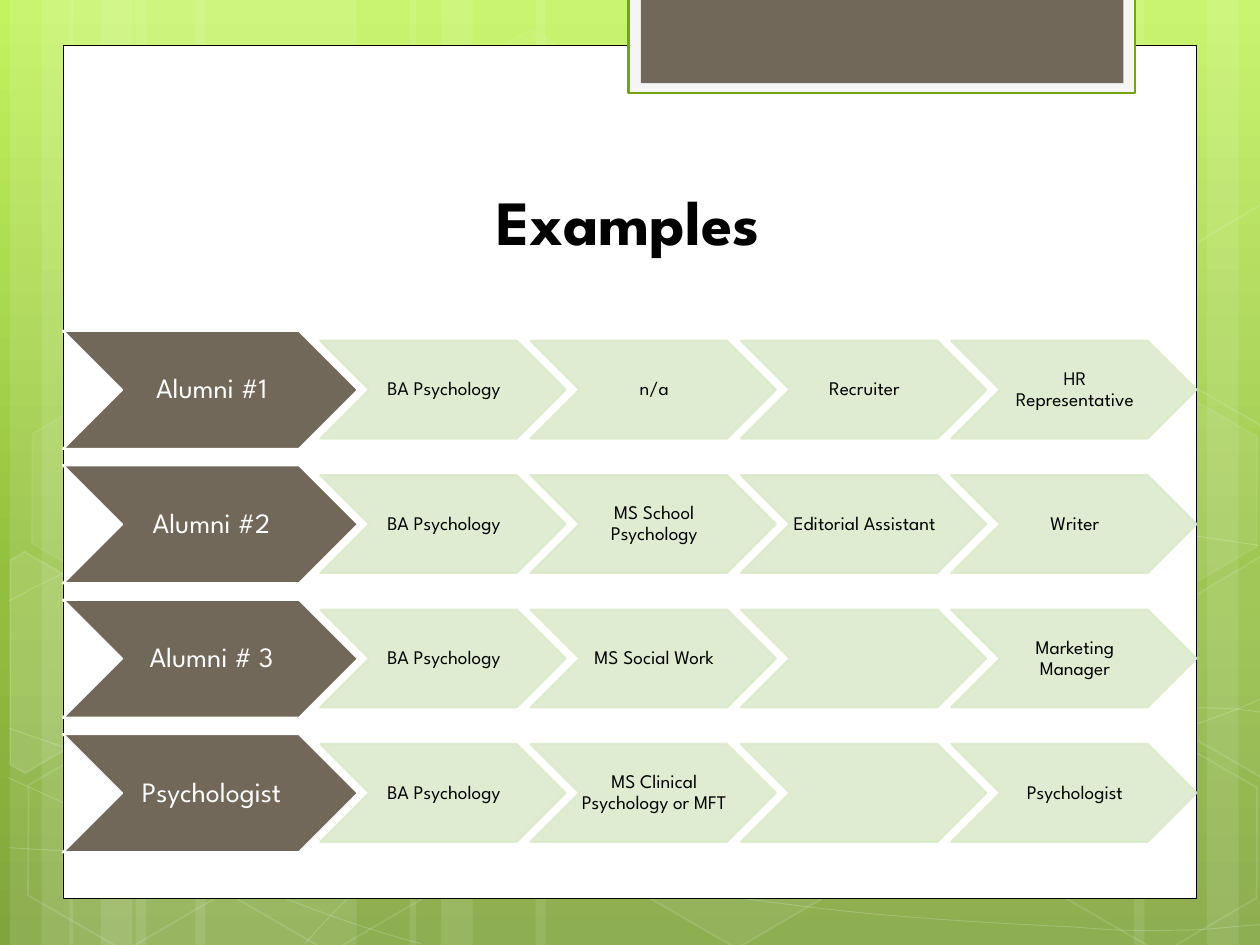
"""Build the Examples slide: four career paths as rows of chevrons."""
import copy
from dataclasses import dataclass

import pptx
import pptx.dml.color
import pptx.enum.shapes
import pptx.enum.text
import pptx.oxml
import pptx.oxml.ns
import pptx.util

Cm = pptx.util.Cm
Pt = pptx.util.Pt
qn = pptx.oxml.ns.qn
MSO = pptx.enum.shapes.MSO_SHAPE
FONT = "League Spartan"
WHITE, BLACK, BROWN, PALE = "FFFFFF", "000000", "71685A", "DCEACC"


@dataclass
class Style:
    fill: str | None = None
    fill_alpha: int = 100
    line: str | None = None
    line_alpha: int = 100
    width: float = 1


@dataclass
class Hexagon:
    left: float
    top: float
    fill_alpha: int
    line_alpha: int


@dataclass
class CutHexagon:
    x: float
    y: float
    fill_alpha: int
    corners: list[tuple[float, float]]


@dataclass
class Career:
    name: str
    steps: list[str]


BARS = [(2.74, 4.45), (0.2, 1.27), (0.84, 2.11), (3.94, 4.45), (1.4, 1.27), (2.03, 2.11),
        (18.62, 4.45), (24.33, 1.27), (22.86, 2.11), (10.8, 7.82), (8.26, 1.27), (8.89, 2.11)]

CURVES = [
    [(0.18, 17.09), (1.55, 17.17), (2.92, 17.25), (4.83, 17.22), (6.73, 17.2), (9.09, 17.15),
     (11.63, 16.89), (14.17, 16.64), (17.78, 16.15), (20.12, 15.67), (22.43, 15.19),
     (24.82, 14.43), (25.58, 14)],
    [(0.18, 12.12), (0.91, 11.71), (1.65, 11.33), (3.07, 10.95), (4.52, 10.57), (6.58, 10.01),
     (8.81, 9.83), (11.07, 9.65), (13.82, 9.63), (16.61, 9.83), (19.41, 10.03),
     (24.05, 10.82), (25.58, 11.02)],
    [(0.15, 15.67), (3.23, 17.07), (6.27, 18.47), (8.48, 19.02)],
    [(0.18, 14.68), (0.97, 14.96), (1.78, 15.24), (3.25, 15.65), (4.72, 16.03), (6.93, 16.66),
     (9.07, 17.09), (11.18, 17.53), (13.84, 17.98), (15.95, 18.24), (18.06, 18.52),
     (20.32, 18.62), (21.67, 18.69), (22.99, 18.8), (23.34, 18.75), (24, 18.75),
     (24.66, 18.72), (25.12, 18.64), (25.58, 18.64)],
    [(6.15, 19.02), (6.6, 18.52), (7.06, 18.01), (7.67, 17.55), (8.28, 17.09), (9.14, 16.59),
     (9.86, 16.23), (10.57, 15.88), (11, 15.72), (11.94, 15.47), (12.88, 15.21),
     (14.55, 14.86), (15.44, 14.68), (16.36, 14.5), (16.48, 14.5), (17.27, 14.45),
     (18.06, 14.38), (19.3, 14.3), (20.17, 14.27), (21.06, 14.25), (22.5, 14.27),
     (22.5, 14.27), (22.5, 14.27), (24.21, 14.27), (24.21, 14.27), (24.66, 14.27),
     (25.1, 14.3), (25.55, 14.38)],
]

HEXAGONS = [
    Hexagon(8.48, 0.91, 4, 8), Hexagon(12.62, 14.96, 6, 12), Hexagon(0.28, 15.01, 0, 12),
    Hexagon(0.36, 7.92, 7, 8), Hexagon(4.42, 15.04, 0, 12), Hexagon(19.13, 11.51, 10, 12),
    Hexagon(21.18, 15.06, 0, 12), Hexagon(21.18, 7.98, 7, 8),
]

LEFT_CUT = [(-1.75, -1.63), (-1.6, -1.93), (0.65, -1.93), (1.75, 0), (0.65, 1.93), (0.3, 1.93)]
RIGHT_CUT = [(-1.73, 0), (-0.65, -1.93), (-0.42, -1.93), (1.73, 1.73), (1.6, 1.93), (-0.63, 1.93)]
CUT_HEXAGONS = [CutHexagon(0.91, 13.59, 10, LEFT_CUT), CutHexagon(25.02, 13.21, 4, RIGHT_CUT),
                CutHexagon(25.02, 6.12, 0, RIGHT_CUT)]

CAREERS = [
    Career("Alumni #1", ["BA Psychology", "n/a", "Recruiter", "HR Representative"]),
    Career("Alumni #2", ["BA Psychology", "MS School Psychology", "Editorial Assistant", "Writer"]),
    Career("Alumni # 3", ["BA Psychology", "MS Social Work", "", "Marketing Manager"]),
    Career("Psychologist", ["BA Psychology", "MS Clinical Psychology or MFT", "", "Psychologist"]),
]


def rgb(value: str):
    """Turn a hex string into a colour."""
    return pptx.dml.color.RGBColor.from_string(value)


def paint(fill, color: str | None, alpha: int) -> None:
    """Fill with a colour at a percentage of opacity, or with nothing."""
    if color is None or alpha == 0:
        fill.background()
        return
    fill.solid()
    fill.fore_color.rgb = rgb(color)
    if alpha < 100:
        fill._xPr.find(".//" + qn("a:srgbClr")).append(pptx.oxml.parse_xml(
            f'<a:alpha {pptx.oxml.ns.nsdecls("a")} val="{alpha * 1000}"/>'))


def apply_style(sp, style: Style):
    """Set the fill and line of a shape and drop its shadow."""
    sp.shadow.inherit = False
    paint(sp.fill, style.fill, style.fill_alpha)
    if style.line:
        sp.line.width = Pt(style.width)
    paint(sp.line.fill, style.line, style.line_alpha)
    return sp


def add_shape(s, kind, box: tuple[float, ...], style: Style):
    """Add a styled preset shape with its box in centimetres."""
    return apply_style(s.shapes.add_shape(kind, *map(Cm, box)), style)


def add_outline(s, points: list[tuple[float, float]], style: Style, close: bool):
    """Add a styled outline through points in centimetres."""
    start, *rest = [(Cm(x), Cm(y)) for x, y in points]
    fb = s.shapes.build_freeform(*start, scale=1.0)
    fb.add_line_segments(rest, close=close)
    return apply_style(fb.convert_to_shape(), style)


def add_curve(s, points: list[tuple[float, float]]) -> None:
    """Add a faint open curve of cubic pieces that share their end points."""
    sp = add_outline(s, points, Style(line=WHITE, line_alpha=20, width=0.5), False)
    lines = list(sp._element.iter(qn("a:lnTo")))
    for first, second, third in zip(lines[::3], lines[1::3], lines[2::3]):
        cubic = pptx.oxml.parse_xml(f'<a:cubicBezTo {pptx.oxml.ns.nsdecls("a")}/>')
        first.addprevious(cubic)
        for line in (first, second, third):
            cubic.append(line[0])
            line.getparent().remove(line)


def set_text(sp, text: str, size: float, color: str, bold: bool = False) -> None:
    """Write one centred paragraph."""
    tf = sp.text_frame
    tf.word_wrap = True
    tf.vertical_anchor = pptx.enum.text.MSO_ANCHOR.MIDDLE
    p = tf.paragraphs[0]
    p.text = text
    p.alignment = pptx.enum.text.PP_ALIGN.CENTER
    p.font.name, p.font.size, p.font.bold = FONT, Pt(size), bold
    p.font.color.rgb = rgb(color)


def add_chevron(s, box: tuple[float, ...], style: Style, text: str, size: float, color: str) -> None:
    """Add a chevron with its label."""
    sp = add_shape(s, MSO.CHEVRON, box, style)
    if text:
        set_text(sp, text, size, color)
        tf = sp.text_frame
        tf.margin_left, tf.margin_right = Cm(0.04), 0
        tf.margin_top = tf.margin_bottom = Cm(0.02)
        tf.paragraphs[0].line_spacing = 0.9


def add_career(s, career: Career, top: float) -> None:
    """Draw one row: a dark name chevron and its pale steps."""
    add_chevron(s, (1.27, top, 5.95, 2.38), Style(BROWN, line=WHITE, width=1.25),
                career.name, 16, WHITE)
    for i, step in enumerate(career.steps):
        add_chevron(s, (6.46 + 4.24 * i, top + 0.2, 4.94, 1.97),
                    Style(PALE, 90, PALE, 90, 1.25), step, 11, BLACK)


def add_backdrop(s) -> None:
    """Draw the green gradient with its bars, curves, hexagons and panel."""
    fill = s.background.fill
    fill.gradient()
    fill.gradient_angle = 270
    stops = s._element.find(".//" + qn("a:gsLst"))
    stops.insert(1, copy.deepcopy(stops[0]))
    for stop, (position, color) in zip(
            fill.gradient_stops, [(0, "C3F35F"), (0.62, "93BF3F"), (1, "81A53E")]):
        stop.position, stop.color.rgb = position, rgb(color)
    for left, width in BARS:
        add_shape(s, MSO.RECTANGLE, (left, 0, width, 19.05), Style(WHITE, 10))
    for points in CURVES:
        add_curve(s, points)
    for h in HEXAGONS:
        sp = add_shape(s, MSO.HEXAGON, (h.left, h.top, 4.45, 3.86),
                       Style(WHITE, h.fill_alpha, WHITE, h.line_alpha))
        sp.adjustments[0] = 0.285
        sp.rotation = 30
    for c in CUT_HEXAGONS:
        points = [(c.x + x, c.y + y) for x, y in c.corners]
        add_outline(s, points, Style(WHITE, c.fill_alpha, WHITE, 12), True).rotation = 30
    for box, style in [((1.27, 0.91, 22.86, 17.2), Style(WHITE, line=BLACK, width=0.5)),
                       ((12.67, -0.05, 10.21, 1.93), Style("F5F5F5", line="74A510", width=1.25)),
                       ((12.92, -0.05, 9.73, 1.73), Style(BROWN))]:
        add_shape(s, MSO.RECTANGLE, box, style)


def main() -> None:
    """Build and save the slide."""
    prs = pptx.Presentation()
    prs.slide_width, prs.slide_height = Cm(25.4), Cm(19.05)
    s = prs.slides.add_slide(prs.slide_layouts[5])
    add_backdrop(s)
    title = s.shapes.title
    title.left, title.top, title.width, title.height = map(Cm, (2.9, 2.86, 19.51, 3.18))
    set_text(title, "Examples", 36, BLACK, bold=True)
    s.shapes._spTree.append(title._element)
    for i, career in enumerate(CAREERS):
        add_career(s, career, 6.67 + 2.71 * i)
    prs.save("out.pptx")


if __name__ == "__main__":
    main()
